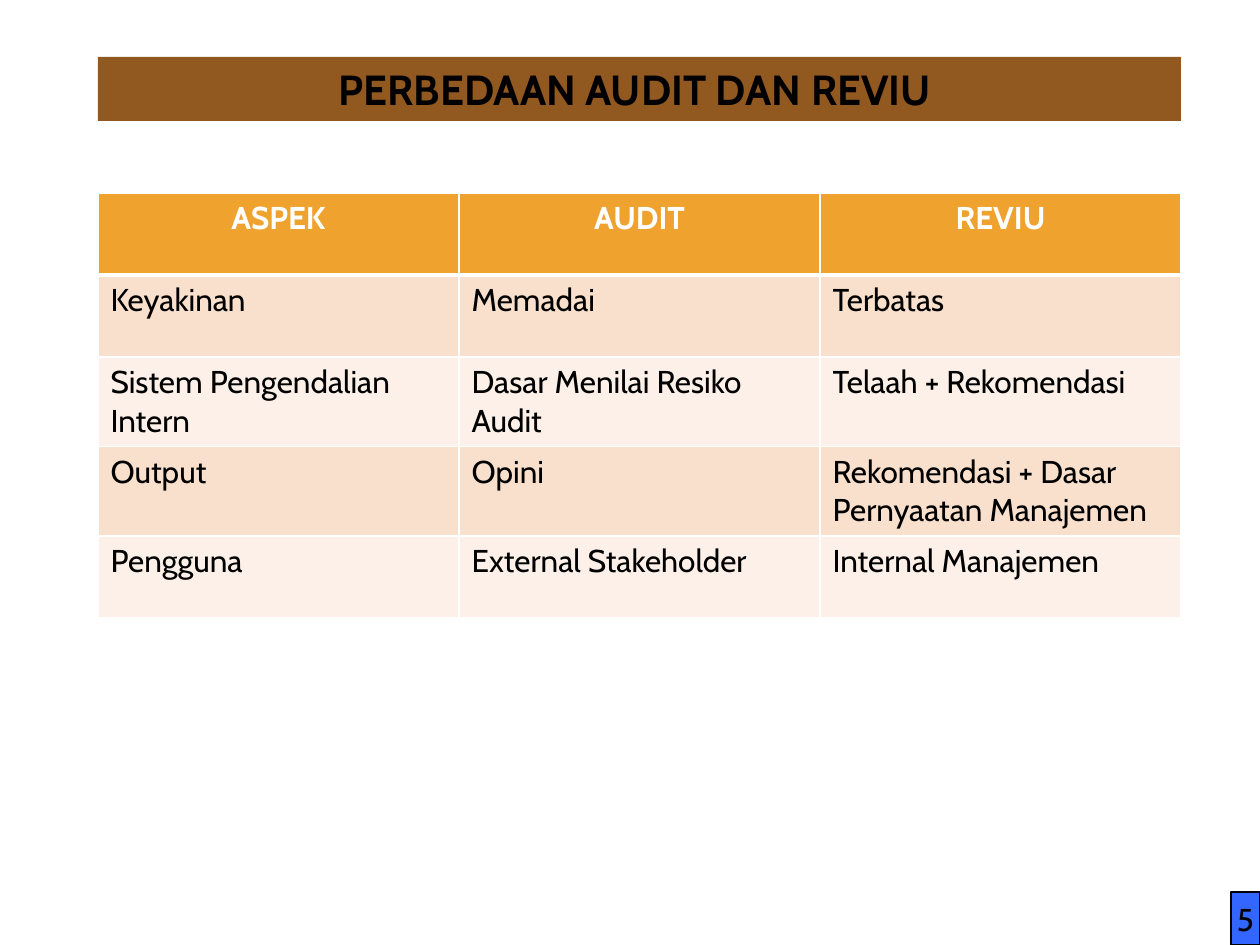
from dataclasses import dataclass

from lxml.etree import SubElement
from pptx import Presentation
from pptx.dml.color import RGBColor as Rgb
from pptx.enum.shapes import MSO_SHAPE as Preset
from pptx.enum.text import MSO_ANCHOR as Anchor, PP_ALIGN as Align
from pptx.oxml.ns import qn
from pptx.util import Emu, Pt

PX_PER_INCH = 126


@dataclass(frozen=True)
class Theme:
    font: str = "Cabin"
    title_size: int = 24
    body_size: int = 18
    ink: str = "000000"
    white: str = "FFFFFF"
    title_fill: str = "91581F"
    page_fill: str = "3366FF"
    header_fill: str = "F0A22E"
    bands: tuple[str, str] = ("F9E0CD", "FCF0E8")
    rule: float = 1
    header_rule: float = 3
    page_outline: float = 0.75


@dataclass(frozen=True)
class Box:
    left: int
    top: int
    width: int
    height: int


@dataclass(frozen=True)
class Label:
    text: str
    size: int
    color: str
    bold: bool = False
    align: Align = Align.LEFT


@dataclass(frozen=True)
class Panel:
    box: Box
    label: Label
    fill: str
    anchor: Anchor
    wrap: bool
    outline: str | None = None


THEME = Theme()
PANELS = (
    Panel(Box(1231, 892, 29, 53), Label("5", THEME.body_size, THEME.ink, align=Align.CENTER),
          THEME.page_fill, Anchor.MIDDLE, False, THEME.ink),
    Panel(Box(98, 57, 1083, 64),
          Label("PERBEDAAN AUDIT DAN REVIU ", THEME.title_size, THEME.ink, True, Align.CENTER),
          THEME.title_fill, Anchor.TOP, True),
)
TABLE_BOX = Box(98, 193, 1083, 410)
ASPECTS = (
    ("ASPEK", "AUDIT", "REVIU"),
    ("Keyakinan", "Memadai", "Terbatas"),
    ("Sistem Pengendalian Intern", "Dasar Menilai Resiko Audit", "Telaah + Rekomendasi"),
    ("Output", "Opini", "Rekomendasi + Dasar Pernyaatan Manajemen"),
    ("Pengguna", "External Stakeholder", "Internal Manajemen"),
)


def px(length: int) -> Emu:
    return Emu(round(length * 914400 / PX_PER_INCH))


def place(box: Box) -> tuple[Emu, Emu, Emu, Emu]:
    return px(box.left), px(box.top), px(box.width), px(box.height)


def write(frame, label: Label) -> None:
    paragraph = frame.paragraphs[0]
    paragraph.alignment = label.align
    run = paragraph.add_run()
    run.text = label.text
    run.font.name = THEME.font
    run.font.size = Pt(label.size)
    run.font.bold = label.bold
    run.font.color.rgb = Rgb.from_string(label.color)


def paint(fill, color: str) -> None:
    fill.solid()
    fill.fore_color.rgb = Rgb.from_string(color)


def draw_panel(slide, panel: Panel) -> None:
    shape = slide.shapes.add_shape(Preset.RECTANGLE, *place(panel.box))
    shape.shadow.inherit = False
    paint(shape.fill, panel.fill)
    if panel.outline:
        paint(shape.line.fill, panel.outline)
        shape.line.width = Pt(THEME.page_outline)
    else:
        shape.line.fill.background()
    shape.text_frame.word_wrap = panel.wrap
    shape.text_frame.vertical_anchor = panel.anchor
    write(shape.text_frame, panel.label)


def rule_cell(cell, top: float, bottom: float) -> None:
    properties = cell._tc.get_or_add_tcPr()
    widths = {"L": THEME.rule, "R": THEME.rule, "T": top, "B": bottom}
    for side, width in widths.items():
        border = SubElement(properties, qn(f"a:ln{side}"), w=str(Pt(width)))
        solid = SubElement(border, qn("a:solidFill"))
        SubElement(solid, qn("a:srgbClr"), val=THEME.white)


def draw_table(slide, box: Box, rows: tuple[tuple[str, ...], ...]) -> None:
    table = slide.shapes.add_table(len(rows), len(rows[0]), *place(box)).table
    for row_index, row in enumerate(rows):
        header = row_index == 0
        fill = THEME.header_fill if header else THEME.bands[(row_index - 1) % 2]
        top = THEME.header_rule if row_index == 1 else THEME.rule
        bottom = THEME.header_rule if header else THEME.rule
        for column_index, text in enumerate(row):
            cell = table.cell(row_index, column_index)
            rule_cell(cell, top, bottom)
            paint(cell.fill, fill)
            write(cell.text_frame, Label(
                text, THEME.body_size, THEME.white if header else THEME.ink,
                header, Align.CENTER if header else Align.LEFT))


def main() -> None:
    deck = Presentation()
    deck.slide_width, deck.slide_height = px(1260), px(945)
    slide = deck.slides.add_slide(deck.slide_layouts[6])
    paint(slide.background.fill, THEME.white)
    for panel in PANELS:
        draw_panel(slide, panel)
    draw_table(slide, TABLE_BOX, ASPECTS)
    deck.save("out.pptx")


if __name__ == "__main__":
    main()
